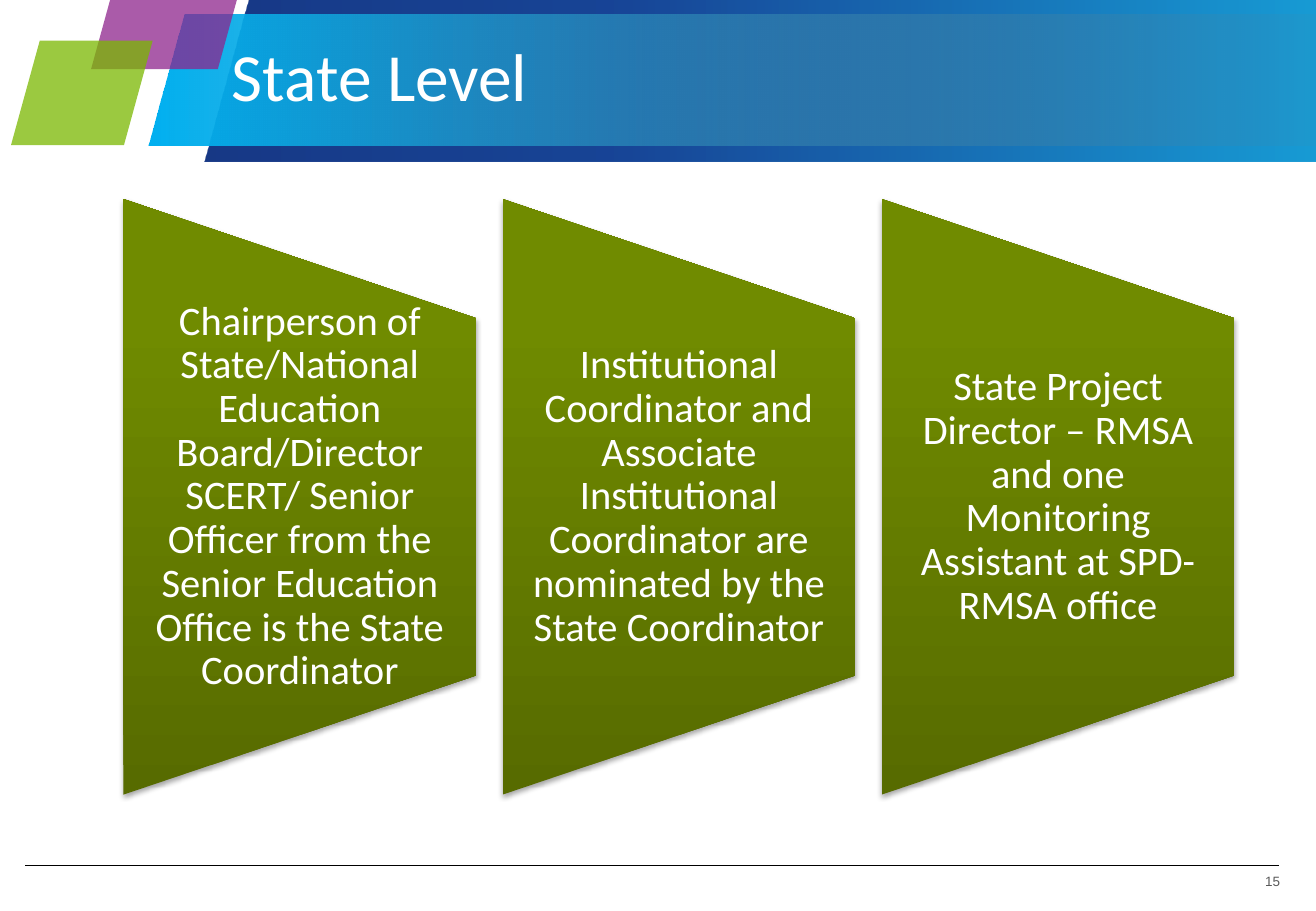
from lxml import etree
from pptx import Presentation
from pptx.dml.color import RGBColor
from pptx.enum.shapes import MSO_CONNECTOR, MSO_SHAPE
from pptx.enum.text import MSO_ANCHOR, MSO_AUTO_SIZE, PP_ALIGN
from pptx.oxml import parse_xml
from pptx.oxml.ns import nsdecls, qn
from pptx.util import Pt

COLORS = {
    "navy": "00257A", "blue": "00338D", "sky": "009FDA", "cyan": "00B0F0",
    "gray": "7A7A7A", "purple": "8E258D", "lime": "7AB800",
    "olive_dark": "576B00", "olive": "708B00", "olive_light": "718B00",
    "white": "FFFFFF", "number": "595959", "rule": "000000",
}


def add_filled(kind, box, stops, angle=0, rotation=0, turn_fill=1):
    """Add a shape filled with (position, colour, opacity) stops; one stop is a solid fill."""
    sp = s.shapes.add_shape(kind, *[Pt(v) for v in box])
    sp.rotation = rotation
    sp.shadow.inherit = False
    sp.line.fill.background()
    sp.fill.background()
    colors = [f'<a:srgbClr val="{COLORS[name]}"><a:alpha val="{opacity * 1000}"/></a:srgbClr>'
              for _, name, opacity in stops]
    if len(stops) == 1:
        xml = f'<a:solidFill {nsdecls("a")}>{colors[0]}</a:solidFill>'
    else:
        gs = "".join(f'<a:gs pos="{stop[0] * 1000}">{color}</a:gs>'
                     for stop, color in zip(stops, colors))
        xml = (f'<a:gradFill {nsdecls("a")} rotWithShape="{turn_fill}"><a:gsLst>{gs}</a:gsLst>'
               f'<a:lin ang="{angle * 60000}" scaled="0"/></a:gradFill>')
    spPr = sp._element.spPr
    spPr.replace(spPr.find(qn("a:noFill")), parse_xml(xml))
    return sp


def add_run(p, text, size, font, color):
    r = p.add_run()
    r.text = text
    r.font.size = Pt(size)
    r.font.name = font
    r.font.color.rgb = RGBColor.from_string(COLORS[color])


prs = Presentation()
prs.slide_width, prs.slide_height = Pt(780), Pt(540)
s = prs.slides.add_slide(prs.slide_layouts[5])

# Header parallelograms
header = [
    ((121, -0.7, 718.6, 96.5), [(0, "navy", 90), (35, "blue", 90), (100, "sky", 90)], 0, 0),
    ((87.8, 8.6, 734.4, 77.8), [(0, "cyan", 100), (100, "gray", 0)], 180, 180),
    ((54, -41.8, 97.9, 82.8), [(0, "purple", 75)], 0, 0),
    ((6.5, 24, 84, 62), [(0, "lime", 75)], 0, 180),
]
for box, stops, angle, rotation in header:
    sp = add_filled(MSO_SHAPE.PARALLELOGRAM, box, stops, angle, rotation)
    sp.adjustments[0] = 0.275

# Footer rule and slide number
rule = s.shapes.add_connector(MSO_CONNECTOR.STRAIGHT, Pt(15.1), Pt(512.6), Pt(758.2), Pt(512.6))
rule.line.color.rgb = RGBColor.from_string(COLORS["rule"])
rule.line.width = Pt(0.25)
etree.SubElement(rule._element.spPr, qn("a:effectLst"))

tf = s.shapes.add_textbox(Pt(715.7), Pt(511.9), Pt(43), Pt(22.3)).text_frame
tf.word_wrap = True
tf.margin_left = tf.margin_top = Pt(5.8)
tf.margin_right = tf.margin_bottom = 0
p = tf.paragraphs[0]
p.alignment = PP_ALIGN.RIGHT
add_run(p, "15", 8, "Arial", "number")

# Three panels, each a trapezoid turned on its side with upright text over it
roles = [
    "Chairperson of State/National Education Board/Director SCERT/ Senior Officer "
    "from the Senior Education Office is the State Coordinator",
    "Institutional Coordinator and Associate Institutional Coordinator are "
    "nominated by the State Coordinator",
    "State Project Director – RMSA and one Monitoring Assistant at SPD-RMSA office",
]
PANEL_W, PANEL_H, PITCH = 209, 353, 224.7
CENTER_Y = 294.5
SHADOW = (f'<a:outerShdw {nsdecls("a")} blurRad="{Pt(3.1)}" dist="{Pt(1.8)}" dir="5400000" '
          f'rotWithShape="0"><a:srgbClr val="{COLORS["rule"]}"><a:alpha val="35000"/>'
          '</a:srgbClr></a:outerShdw>')
for i, role in enumerate(roles):
    left = 73.2 + i * PITCH
    panel = add_filled(
        MSO_SHAPE.FLOWCHART_MANUAL_OPERATION,
        (left + (PANEL_W - PANEL_H) / 2, CENTER_Y - PANEL_W / 2, PANEL_H, PANEL_W),
        [(0, "olive_dark", 100), (80, "olive", 100), (100, "olive_light", 100)],
        angle=270, rotation=270, turn_fill=0)
    panel._element.spPr.find(qn("a:effectLst")).append(parse_xml(SHADOW))

    tf = s.shapes.add_textbox(Pt(left), Pt(188.6), Pt(PANEL_W), Pt(211.8)).text_frame
    tf.word_wrap = True
    tf.vertical_anchor = MSO_ANCHOR.MIDDLE
    tf.margin_left = tf.margin_right = Pt(12)
    tf.margin_top = tf.margin_bottom = 0
    p = tf.paragraphs[0]
    p.alignment = PP_ALIGN.CENTER
    p.line_spacing = 0.9
    add_run(p, role, 24, "Calibri", "white")

# Title, brought in front of the header
title = s.shapes.title
s.shapes._spTree.append(title._element)
title.left, title.top, title.width, title.height = Pt(130.3), Pt(16.6), Pt(191.5), Pt(55.4)
tf = title.text_frame
tf.word_wrap = False
tf.auto_size = MSO_AUTO_SIZE.SHAPE_TO_FIT_TEXT
tf.vertical_anchor = MSO_ANCHOR.TOP
p = tf.paragraphs[0]
p.alignment = PP_ALIGN.LEFT
add_run(p, "State Level", 40, "Calibri", "white")

prs.save("out.pptx")
